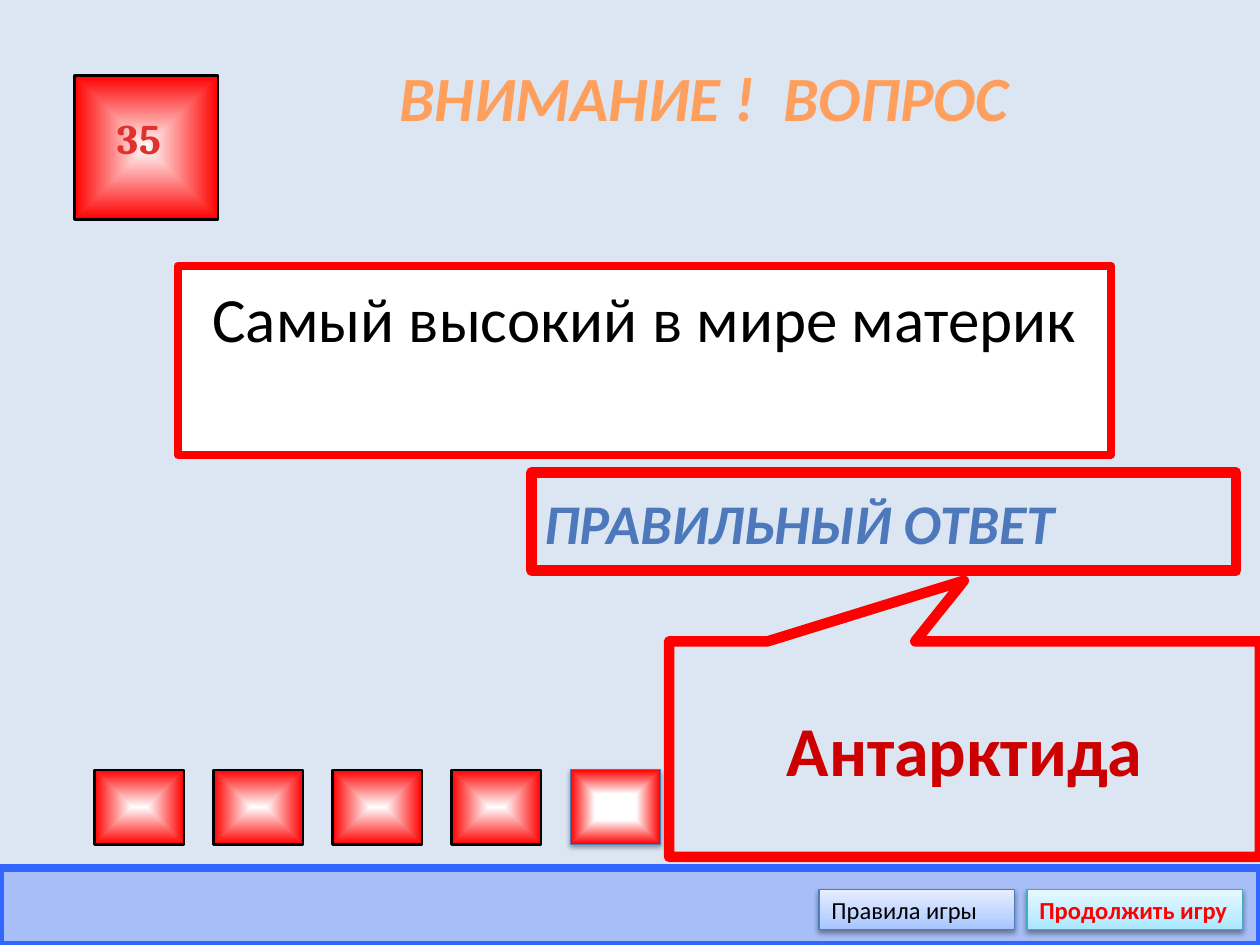
from lxml import etree
from pptx import Presentation
from pptx.dml.color import RGBColor as RGB
from pptx.enum.shapes import MSO_SHAPE as SHAPE
from pptx.enum.text import MSO_ANCHOR as ANCHOR, MSO_AUTO_SIZE as AUTO, PP_ALIGN as ALIGN
from pptx.oxml.ns import qn
from pptx.util import Inches, Pt

COLORS = dict(back="DCE6F2", red="FF0000", black="000000", white="FFFFFF",
              answer="CC0000", bar="3366FF", blue="4B7EBC", teal="46AAC5")
TITLE = "ВНИМАНИЕ !  ВОПРОС"
QUESTION = "Самый высокий в мире материк"
LABEL = "ПРАВИЛЬНЫЙ ОТВЕТ"
ANSWER = "Антарктида"
SCORE = "35"
TITLE_STOPS = [(0, "FFA367"), (25, "FF9F5D"), (50, "F38E3A"), (75, "FF9F5D"), (100, "FFA367")]
LABEL_STOPS = [(0, "7494C9"), (49, "4D79BC"), (50, "346AAA"), (92, "325F94"), (100, "315D91")]
SCORE_STOPS = [(25, "E0322D"), (100, "A2201C")]
TILE_STOPS = [(0, "FFFFFF"), (100, "FF0000")]
LAST_STOPS = [(0, "FFFFFF"), (35, "FFFFFF"), (100, "FF0000"), (100, "FFFFFF")]
BUTTONS = [
    ("Правила игры", 6.5, 1.55, "blue", "black", False,
     [(0, "A4C4FF"), (35, "BFD4FF"), (100, "E6EEFF")]),
    ("Продолжить игру", 8.15, 1.71, "teal", "red", True,
     [(0, "A7E6FF"), (35, "C1EDFF"), (100, "E7F8FF")]),
]
TILE_COUNT, TILE_LEFT, TILE_STEP = 5, 0.75, 0.945


def color(name):
    return RGB.from_string(COLORS[name])


def add(parent, tag, **attrs):
    return etree.SubElement(parent, qn(tag), {k: str(v) for k, v in attrs.items()})


def gradient(stops, angle=None, path="rect"):
    grad = etree.Element(qn("a:gradFill"), rotWithShape="1")
    stop_list = add(grad, "a:gsLst")
    for pos, rgb in stops:
        add(add(stop_list, "a:gs", pos=pos * 1000), "a:srgbClr", val=rgb)
    if angle is None:
        add(add(grad, "a:path", path=path), "a:fillToRect", l=50000, t=50000, r=50000, b=50000)
    else:
        add(grad, "a:lin", ang=angle * 60000, scaled=0)
    return grad


def outline(s, name, width):
    s.line.color.rgb = color(name)
    s.line.width = Pt(width)


def shape(kind, box, line, width, fill=None, grad=None):
    s = slide.shapes.add_shape(kind, *map(Inches, box))
    s.shadow.inherit = False
    outline(s, line, width)
    if grad is None:
        s.fill.solid()
        s.fill.fore_color.rgb = color(fill)
    else:
        s.fill.background()
        sp_pr = s._element.spPr
        sp_pr.replace(sp_pr.find(qn("a:noFill")), grad)
    return s


def drop_shadow(s):
    effects = s._element.spPr.find(qn("a:effectLst"))
    shadow = add(effects, "a:outerShdw", blurRad=Pt(3.1), dist=Pt(1.6), dir=5400000, rotWithShape=0)
    add(add(shadow, "a:srgbClr", val=COLORS["black"]), "a:alpha", val=38000)


def write(s, text, size, font="Calibri", fill=None, stops=None, bold=False, italic=False,
          align=ALIGN.LEFT, anchor=ANCHOR.MIDDLE):
    tf = s.text_frame
    tf.word_wrap, tf.auto_size, tf.vertical_anchor = True, AUTO.NONE, anchor
    p = tf.paragraphs[0]
    p.alignment = align
    r = p.add_run()
    r.text = text
    p.font.name, p.font.size, p.font.bold, p.font.italic = font, Pt(size), bold, italic
    if stops:
        r._r.get_or_add_rPr().insert(0, gradient(stops, 90))
    else:
        r.font.color.rgb = color(fill)
    return p


def place(s, box):
    s.left, s.top, s.width, s.height = map(Inches, box)


prs = Presentation()
prs.slide_width, prs.slide_height = Inches(10), Inches(7.5)
slide = prs.slides.add_slide(prs.slide_layouts[1])
slide.background.fill.solid()
slide.background.fill.fore_color.rgb = color("back")

title, body = slide.placeholders
place(title, (2.4, 0.3, 6.38, 0.93))
write(title, TITLE, 36, stops=TITLE_STOPS, bold=True, italic=True, align=ALIGN.CENTER)

place(body, (1.41, 2.11, 7.41, 1.5))
body.fill.solid()
body.fill.fore_color.rgb = color("white")
outline(body, "red", 4.5)
p = write(body, QUESTION, 36, fill="black", align=ALIGN.CENTER, anchor=ANCHOR.TOP)
p.line_spacing, p.space_before = 1.1, Pt(7.2)
p_pr = p._p.get_or_add_pPr()
p_pr.set("marL", str(Inches(0.38)))
p_pr.set("indent", str(Inches(-0.38)))
p_pr.insert(2, etree.Element(qn("a:buNone")))

shape(SHAPE.ACTION_BUTTON_CUSTOM, (0.59, 0.6, 1.14, 1.14), "black", 1.5, grad=gradient(TILE_STOPS))
score = slide.shapes.add_textbox(*map(Inches, (0.83, 0.84, 0.63, 0.63)))
p = write(score, SCORE, 24, font="Cambria", stops=SCORE_STOPS, bold=True, anchor=ANCHOR.TOP)
p.runs[0]._r.get_or_add_rPr().set("spc", "50")

for i in range(TILE_COUNT):
    last = i == TILE_COUNT - 1
    grad = gradient(LAST_STOPS, path="shape") if last else gradient(TILE_STOPS)
    s = shape(SHAPE.ACTION_BUTTON_CUSTOM, (TILE_LEFT + i * TILE_STEP, 6.11, 0.71, 0.59),
              "blue" if last else "black", 0.75 if last else 1.5, grad=grad)
    if last:
        drop_shadow(s)

label = shape(SHAPE.RECTANGLE, (4.22, 3.75, 5.59, 0.78), "red", 6, "back")
write(label, LABEL, 32, stops=LABEL_STOPS, bold=True, italic=True)

callout = shape(SHAPE.RECTANGULAR_CALLOUT, (5.31, 5.09, 4.69, 1.71), "red", 6, "back")
callout.adjustments[0], callout.adjustments[1] = -0.001, -0.782
p = write(callout, ANSWER, 40, fill="answer", bold=True, align=ALIGN.CENTER, anchor=ANCHOR.TOP)
p.line_spacing = 1.7

bar = shape(SHAPE.RECTANGLE, (0, 6.89, 10, 0.61), "bar", 4.5, "bar")
add(bar._element.spPr.find(qn("a:solidFill"))[0], "a:alpha", val=31000)

for text, left, width, line, fill, bold, stops in BUTTONS:
    s = shape(SHAPE.RECTANGLE, (left, 7.06, width, 0.32), line, 0.75, grad=gradient(stops, 270))
    drop_shadow(s)
    write(s, text, 14, fill=fill, bold=bold)
    s.text_frame.margin_right = 0

prs.save("out.pptx")
